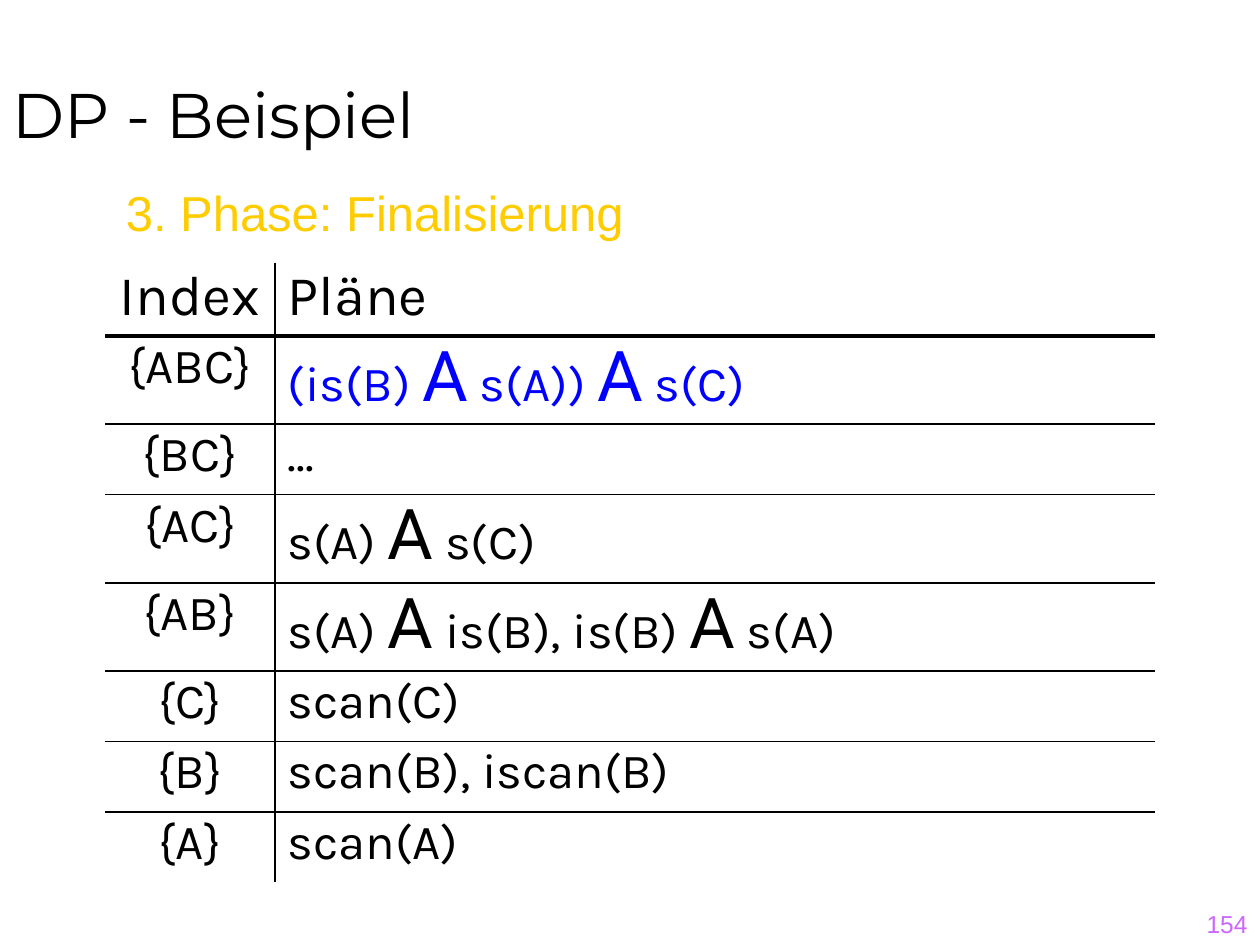
from dataclasses import dataclass

import pptx
import pptx.dml.color
import pptx.enum.text
import pptx.oxml
import pptx.oxml.ns
import pptx.util

COLORS = {"text": "000000", "best": "0000FF", "phase": "FFCC00", "number": "CC66FF"}
ALIGN = pptx.enum.text.PP_ALIGN
ANCHOR = pptx.enum.text.MSO_ANCHOR
JOIN = "A"

prs = pptx.Presentation()
prs.slide_width = pptx.util.Inches(10)
prs.slide_height = pptx.util.Inches(7.5)
GRID_COLS, GRID_ROWS = 12, 18


@dataclass
class PlanRow:
    index: str
    plans: str
    color: str = "text"
    size: int = 28

    @property
    def height(self) -> float:
        """Height in grid rows; the header and rows with joins are taller."""
        if self.size > 28:
            return 1.4
        return 1.68 if f" {JOIN} " in self.plans else 1.34


ROWS = [
    PlanRow("Index", "Pläne", size=32),
    PlanRow("{ABC}", "(is(B) A s(A)) A s(C)", "best"),
    PlanRow("{BC}", "..."),
    PlanRow("{AC}", "s(A) A s(C)"),
    PlanRow("{AB}", "s(A) A is(B), is(B) A s(A)"),
    PlanRow("{C}", "scan(C)"),
    PlanRow("{B}", "scan(B), iscan(B)"),
    PlanRow("{A}", "scan(A)"),
]
COL_WIDTHS = (1.62, 8.38)


def cols(n: float) -> int:
    return round(prs.slide_width * n / GRID_COLS)


def rows(n: float) -> int:
    return round(prs.slide_height * n / GRID_ROWS)


def style(r, font: str, size: int, color: str) -> None:
    r.font.name = font
    r.font.size = pptx.util.Pt(size)
    r.font.color.rgb = pptx.dml.color.RGBColor.from_string(COLORS[color])


def add_label(s, text: str, box: tuple, size: int, color: str):
    left, top, width, height = box
    tf = s.shapes.add_textbox(cols(left), rows(top), cols(width), rows(height)).text_frame
    tf.text = text
    style(tf.paragraphs[0].runs[0], "Arial", size, color)
    return tf


def set_borders(cell, **widths: float) -> None:
    """Draw the edges L, R, T and B in points; a width of 0 hides the edge."""
    tc_pr = cell._tc.get_or_add_tcPr()
    for edge in "LRTB":
        width = widths[edge]
        fill = (f'<a:solidFill><a:srgbClr val="{COLORS["text"]}"/></a:solidFill>'
                if width else "<a:noFill/>")
        tc_pr.append(pptx.oxml.parse_xml(
            f'<a:ln{edge} {pptx.oxml.ns.nsdecls("a")} w="{pptx.util.Pt(width)}">'
            f"{fill}</a:ln{edge}>"))


def fill_cell(cell, text: str, size: int, color: str, align) -> None:
    """Write the text, setting each free-standing join symbol larger."""
    p = cell.text_frame.paragraphs[0]
    p.alignment = align
    p.line_spacing = 0.9
    for i, part in enumerate(text.replace(f" {JOIN} ", f" |{JOIN}| ").split("|")):
        r = p.add_run()
        r.text = part
        if i % 2:
            style(r, "Roboto", 40, color)
        else:
            style(r, "Karla", size, color)


def add_plan_table(s) -> None:
    table = s.shapes.add_table(
        len(ROWS), len(COL_WIDTHS), cols(1), rows(5), cols(sum(COL_WIDTHS)),
        rows(sum(row.height for row in ROWS))).table
    table.first_row = table.horz_banding = False
    for column, width in zip(table.columns, COL_WIDTHS):
        column.width = cols(width)
    rules = [0, 3] + [1] * (len(ROWS) - 2) + [0]
    for i, row in enumerate(ROWS):
        table.rows[i].height = rows(row.height)
        index, plans = table.cell(i, 0), table.cell(i, 1)
        set_borders(index, L=0, R=1, T=rules[i], B=rules[i + 1])
        set_borders(plans, L=1, R=0, T=rules[i], B=rules[i + 1])
        for cell in (index, plans):
            cell.fill.background()
        fill_cell(index, row.index, row.size, "text", ALIGN.CENTER)
        fill_cell(plans, row.plans, row.size, row.color, ALIGN.LEFT)


def main() -> None:
    s = prs.slides.add_slide(prs.slide_layouts[5])

    title = s.shapes.title
    title.left, title.top, title.width, title.height = 0, 0, cols(12), rows(3)
    tf = title.text_frame
    tf.text = "DP - Beispiel"
    tf.vertical_anchor = ANCHOR.BOTTOM
    tf.paragraphs[0].alignment = ALIGN.LEFT
    style(tf.paragraphs[0].runs[0], "Montserrat", 36, "text")

    number = add_label(s, "154", (9.5, 16.8, 2.5, 1.2), 14, "number")
    number.word_wrap = True
    number.vertical_anchor = ANCHOR.BOTTOM
    number.paragraphs[0].alignment = ALIGN.RIGHT

    add_plan_table(s)

    phase = add_label(s, "3. Phase: Finalisierung", (1.08, 3.36, 5, 1.37), 28, "phase")
    phase.word_wrap = False
    phase.auto_size = pptx.enum.text.MSO_AUTO_SIZE.SHAPE_TO_FIT_TEXT

    prs.save("out.pptx")


if __name__ == "__main__":
    main()
